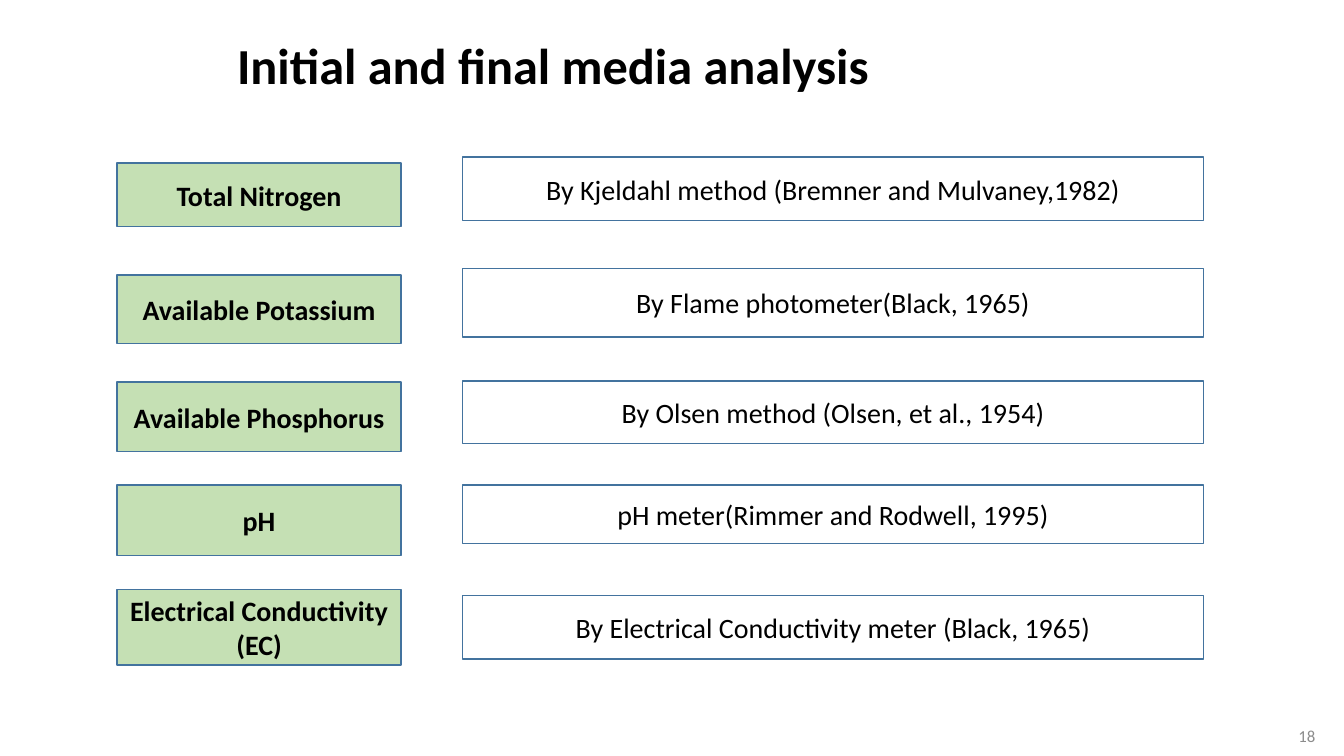
from pptx import Presentation
from pptx.dml.color import RGBColor
from pptx.enum.shapes import MSO_SHAPE as Shape
from pptx.enum.text import MSO_ANCHOR as Anchor, PP_ALIGN as Align
from pptx.util import Cm, Pt

TITLE = "Initial and final media analysis"
PAGE_NUMBER = "18"
FONT = "Calibri"
COLORS = {"label": "C5E0B4", "method": "FFFFFF", "line": "43739E",
          "text": "000000", "number": "8C8C8C"}

# Column: left, width, bold (cm)
COLUMNS = {"label": (2.95, 7.16, True), "method": (11.66, 18.67, False)}

# Each row: shape, then text, top and height (cm) of label and method
ROWS = [
    (Shape.RECTANGLE, {
        "label": ("Total Nitrogen", 4.11, 1.6),
        "method": ("By Kjeldahl method (Bremner and Mulvaney,1982)", 3.96, 1.6)}),
    (Shape.FLOWCHART_PROCESS, {
        "label": ("Available Potassium", 6.93, 1.73),
        "method": ("By Flame photometer(Black, 1965)", 6.76, 1.73)}),
    (Shape.FLOWCHART_PROCESS, {
        "label": ("Available Phosphorus", 9.63, 1.75),
        "method": ("By Olsen method (Olsen, et al., 1954)", 9.6, 1.57)}),
    (Shape.FLOWCHART_PROCESS, {
        "label": ("pH", 12.22, 1.78),
        "method": ("pH meter(Rimmer and Rodwell, 1995)", 12.22, 1.47)}),
    (Shape.FLOWCHART_PROCESS, {
        "label": ("Electrical Conductivity (EC)", 14.86, 1.9),
        "method": ("By Electrical Conductivity meter (Black, 1965)", 15.01, 1.6)}),
]


def color(name):
    return RGBColor.from_string(COLORS[name])


def write(box, text, size, align, anchor=Anchor.MIDDLE, bold=False, ink="text"):
    frame = box.text_frame
    frame.word_wrap = True
    frame.vertical_anchor = anchor
    para = frame.paragraphs[0]
    para.alignment = align
    span = para.add_run()
    span.text = text
    span.font.name = FONT
    span.font.size = Pt(size)
    span.font.bold = bold
    span.font.color.rgb = color(ink)


def main():
    deck = Presentation()
    deck.slide_width, deck.slide_height = Cm(33.87), Cm(19.05)
    page = deck.slides.add_slide(deck.slide_layouts[5])

    # Title
    title = page.shapes.title
    title.left, title.top, title.width, title.height = (
        Cm(5.72), Cm(1.02), Cm(25.83), Cm(2.69))
    title.text_frame.margin_top = 0
    write(title, TITLE, 36, Align.LEFT, Anchor.TOP, bold=True)
    title.text_frame.paragraphs[0].line_spacing = 0.9

    # Property and method boxes
    for shape, cells in ROWS:
        for column, (text, top, height) in cells.items():
            left, width, bold = COLUMNS[column]
            box = page.shapes.add_shape(
                shape, Cm(left), Cm(top), Cm(width), Cm(height))
            box.shadow.inherit = False
            box.fill.solid()
            box.fill.fore_color.rgb = color(column)
            box.line.color.rgb = color("line")
            box.line.width = Pt(1)
            write(box, text, 20, Align.CENTER, bold=bold)

    # Page number
    number = page.shapes.add_textbox(Cm(25.78), Cm(18.03), Cm(7.62), Cm(1.02))
    write(number, PAGE_NUMBER, 12, Align.RIGHT, ink="number")

    deck.save("out.pptx")


if __name__ == "__main__":
    main()
